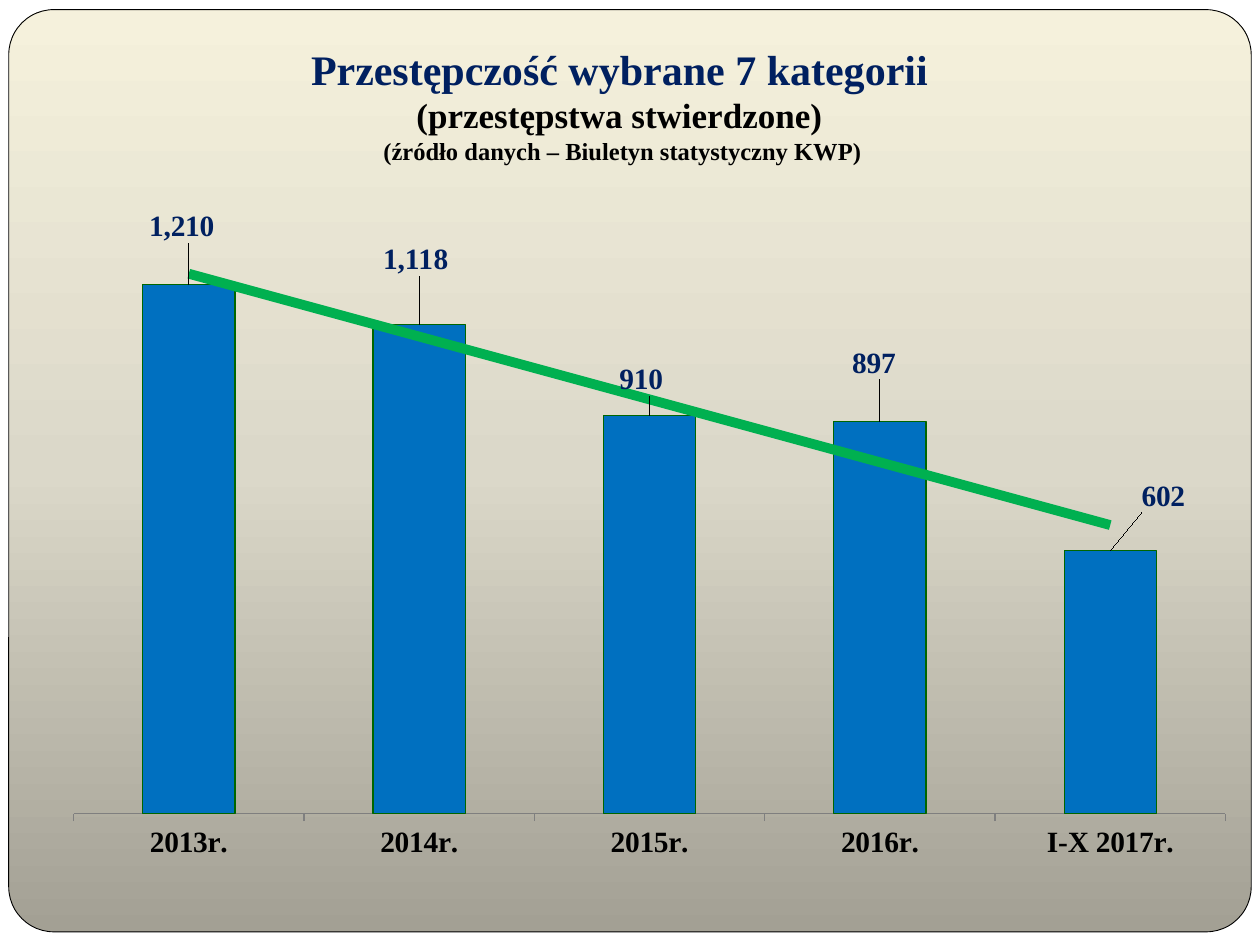
"""Build the slide on recorded crimes in seven categories."""
from copy import deepcopy
from dataclasses import dataclass

from lxml import etree
from pptx import Presentation
from pptx import util as u
from pptx.chart.data import CategoryChartData
from pptx.dml.color import RGBColor
from pptx.enum import chart as ch, shapes, text
from pptx.oxml import parse_xml
from pptx.oxml.ns import nsdecls, qn


@dataclass(frozen=True)
class Theme:
    font: str = "Times New Roman"
    navy: str = "002060"
    black: str = "000000"
    white: str = "FFFFFF"
    blue: str = "0070C0"
    edge: str = "006600"
    green: str = "00B050"
    gray: str = "7F7F7F"
    shade: tuple = ((0, "A3A094"), (0.5, "DBD8C9"), (1, "F5F1DC"))
    head: float = 24
    sub: float = 20
    note: float = 14
    label: float = 16.8


@dataclass(frozen=True)
class Box:
    left: float
    top: float
    width: float
    height: float

    def pts(self) -> tuple:
        return tuple(map(u.Pt, (self.left, self.top, self.width, self.height)))


@dataclass(frozen=True)
class Line:
    words: str
    size: float
    color: str


@dataclass(frozen=True)
class Bar:
    name: str
    value: int
    dx: float
    dy: float


LOOK = Theme()
LINES = (
    Line("Przestępczość wybrane 7 kategorii", LOOK.head, LOOK.navy),
    Line("(przestępstwa stwierdzone)", LOOK.sub, LOOK.black),
    Line(" (źródło danych – Biuletyn statystyczny KWP)", LOOK.note, LOOK.black),
)
BARS = (
    Bar("2013r.", 1210, -0.006, -0.05),
    Bar("2014r.", 1118, -0.003, -0.06),
    Bar("2015r.", 910, -0.007, -0.02),
    Bar("2016r.", 897, -0.005, -0.05),
    Bar("I-X 2017r.", 602, 0.044, -0.045),
)
PLOT = Box(0.035, 0.028, 0.956, 0.838)


def rgb(code: str) -> RGBColor:
    return RGBColor.from_string(code)


def style(font, size: float, color: str) -> None:
    font.name, font.size, font.bold = LOOK.font, u.Pt(size), True
    font.color.rgb = rgb(color)


def layout(**vals) -> etree._Element:
    body = "".join(f'<c:{key} val="{val}"/>' for key, val in vals.items())
    return parse_xml(f'<c:layout {nsdecls("c")}><c:manualLayout>{body}'
                     "</c:manualLayout></c:layout>")


def panel(slide, box: Box) -> None:
    card = slide.shapes.add_shape(shapes.MSO_SHAPE.ROUNDED_RECTANGLE, *box.pts())
    card.adjustments[0] = 0.049
    card.shadow.inherit = False
    card.fill.gradient()
    card.fill.gradient_angle = 90
    first = card.element.find(".//" + qn("a:gs"))
    first.addnext(deepcopy(first))
    for stop, (pos, color) in zip(card.fill.gradient_stops, LOOK.shade):
        stop.position = pos
        stop.color.rgb = rgb(color)
    card.line.color.rgb = rgb(LOOK.black)
    card.line.width = u.Pt(0.5)


def title(slide, box: Box) -> None:
    frame = slide.shapes.add_textbox(*box.pts()).text_frame
    frame.word_wrap = True
    frame.vertical_anchor = text.MSO_ANCHOR.BOTTOM
    frame.margin_bottom = u.Pt(7.2)
    para = frame.paragraphs[0]
    para.alignment = text.PP_ALIGN.CENTER
    for num, line in enumerate(LINES):
        if num:
            para.add_line_break()
        run = para.add_run()
        run.text = line.words
        style(run.font, line.size, line.color)


def trend(series, color: str, width: float) -> None:
    node = parse_xml(
        f'<c:trendline {nsdecls("c", "a")}><c:spPr><a:ln w="{u.Pt(width)}">'
        f'<a:solidFill><a:srgbClr val="{color}"/></a:solidFill></a:ln></c:spPr>'
        '<c:trendlineType val="linear"/><c:dispRSqr val="0"/>'
        '<c:dispEq val="0"/></c:trendline>')
    series._element.find(qn("c:cat")).addprevious(node)


def tags(series) -> None:
    labels = series.data_labels
    labels.show_value = True
    labels.number_format, labels.number_format_is_linked = "#,##0", False
    style(labels.font, LOOK.label, LOOK.navy)
    for num, bar in enumerate(BARS):
        label = series.points[num].data_label
        style(label.font, LOOK.label, LOOK.navy)
        label.position = ch.XL_LABEL_POSITION.OUTSIDE_END
    nodes = series._element.iter(qn("c:dLbl"))
    for node, bar in zip(nodes, BARS):
        node.find(qn("c:idx")).addnext(layout(x=bar.dx, y=bar.dy))


def axes(chart) -> None:
    cat, val = chart.category_axis, chart.value_axis
    cat.major_tick_mark = ch.XL_TICK_MARK.OUTSIDE
    cat.format.line.color.rgb = rgb(LOOK.gray)
    cat.format.line.width = u.Pt(0.75)
    style(cat.tick_labels.font, LOOK.label, LOOK.black)
    val.minimum_scale, val.maximum_scale = 0, 1400
    val.has_major_gridlines = False
    val.visible = False


def graph(slide, box: Box) -> None:
    data = CategoryChartData(number_format="#,##0")
    data.categories = [bar.name for bar in BARS]
    data.add_series("Series 1", [bar.value for bar in BARS])
    kind = ch.XL_CHART_TYPE.COLUMN_CLUSTERED
    chart = slide.shapes.add_chart(kind, *box.pts(), data).chart
    chart.has_legend = chart.has_title = False
    chart.font.name, chart.font.size = LOOK.font, u.Pt(25.2)
    chart.font.color.rgb = rgb(LOOK.black)
    plot = chart.plots[0]
    plot.gap_width, plot.vary_by_categories = 150, False
    series = plot.series[0]
    series.format.fill.solid()
    series.format.fill.fore_color.rgb = rgb(LOOK.blue)
    series.format.line.color.rgb = rgb(LOOK.edge)
    series.format.line.width = u.Pt(0.75)
    tags(series)
    trend(series, LOOK.green, 5.6)
    axes(chart)
    area = chart.element.find(".//" + qn("c:plotArea"))
    for old in area.findall(qn("c:layout")):
        area.remove(old)
    area.insert(0, layout(layoutTarget="inner", xMode="edge", yMode="edge",
                          x=PLOT.left, y=PLOT.top, w=PLOT.width, h=PLOT.height))


def main() -> None:
    deck = Presentation()
    deck.slide_width, deck.slide_height = u.Pt(720), u.Pt(540)
    slide = deck.slides.add_slide(deck.slide_layouts[6])
    back = slide.background.fill
    back.solid()
    back.fore_color.rgb = rgb(LOOK.white)
    panel(slide, Box(5, 5.5, 710, 527))
    title(slide, Box(72, 11.5, 564, 90))
    graph(slide, Box(18, 103.5, 688.5, 417.5))
    deck.save("out.pptx")


if __name__ == "__main__":
    main()
